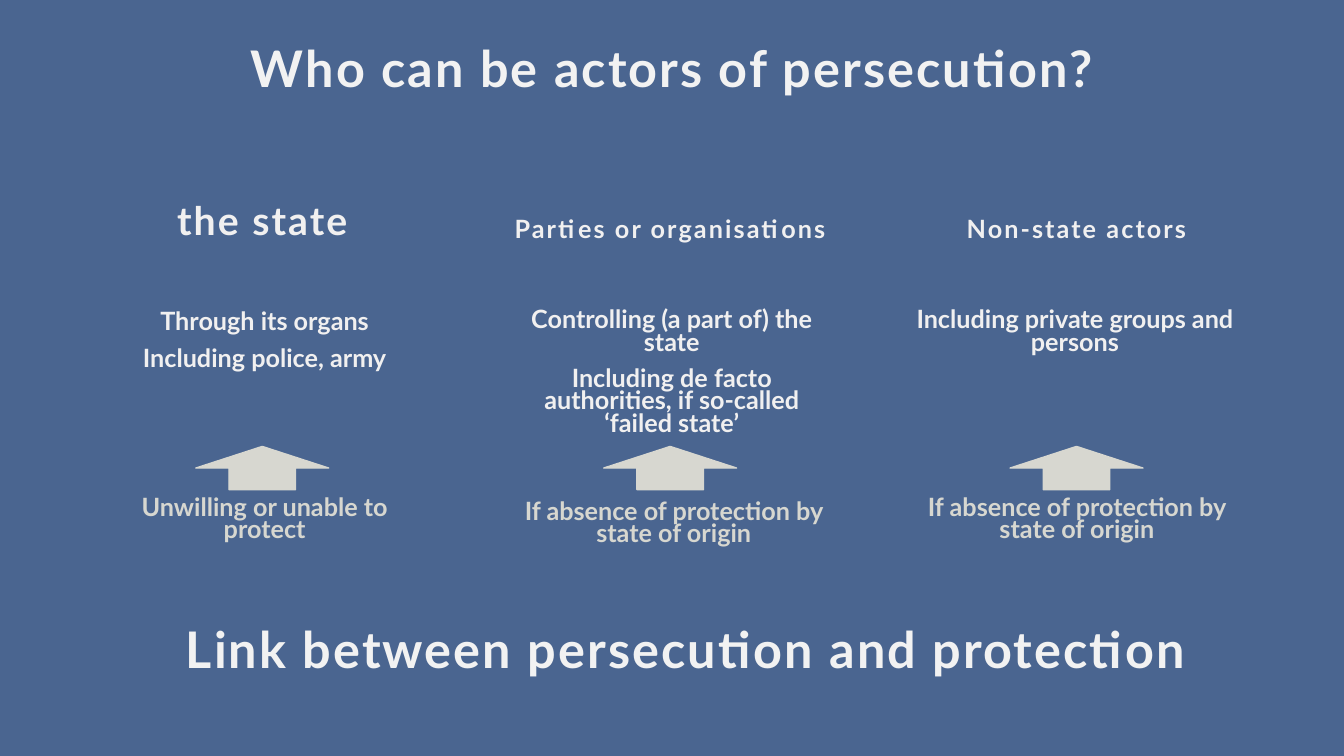
from dataclasses import dataclass

from pptx import Presentation
from pptx.dml.color import RGBColor
from pptx.enum.shapes import MSO_SHAPE
from pptx.enum.text import MSO_ANCHOR, PP_ALIGN
from pptx.util import Cm, Pt

UP_ARROW = MSO_SHAPE.UP_ARROW
TOP, MIDDLE, BOTTOM = MSO_ANCHOR.TOP, MSO_ANCHOR.MIDDLE, MSO_ANCHOR.BOTTOM
CENTER = PP_ALIGN.CENTER


@dataclass(frozen=True)
class Theme:
    font: str = "Lato"
    background: RGBColor = RGBColor(0x4A, 0x65, 0x90)
    banner: RGBColor = RGBColor(0xF2, 0xF2, 0xF2)
    body: RGBColor = RGBColor(0xF1, 0xF0, 0xF0)
    accent: RGBColor = RGBColor(0xD7, 0xD7, 0xD0)
    banner_size: int = 36
    lead_size: int = 28
    body_size: int = 18
    body_leading: Pt = Pt(16)
    heading_leading: float = 0.9
    tracking: float = 1.5


@dataclass(frozen=True)
class Actor:
    """One column; the offsets of its texts are in cm from the column's corner."""
    left: float
    heading: str
    heading_size: int
    details: tuple
    detail_offset: tuple
    condition: str
    condition_offset: tuple


THEME = Theme()
COLUMN_TOP, COLUMN_WIDTH = 4.39, 8.74
ABSENCE = "If absence of protection by state of origin"
ACTORS = (
    Actor(2.24, "the state", THEME.lead_size,
          ("Through its organs", "Including police, army"), (0.1, 3.38),
          "Unwilling or unable to protect", (0.1, 8.06)),
    Actor(12.52, "Parties or organisations", THEME.body_size,
          ("Controlling (a part of) the state",
           "Including de facto authorities, if so-called ‘failed state’"), (0.08, 3.33),
          ABSENCE, (0.13, 8.16)),
    Actor(22.76, "Non-state actors", THEME.body_size,
          ("Including private groups and persons",), (0, 3.33),
          ABSENCE, (0.05, 8.06)),
)


def add_text(slide, box, *paragraphs, size=THEME.body_size, color=THEME.body,
             anchor=TOP, leading=THEME.body_leading, before=10, tracking=0):
    frame = slide.shapes.add_textbox(*map(Cm, box)).text_frame
    frame.word_wrap = True
    frame.vertical_anchor = anchor
    for index, text in enumerate(paragraphs):
        paragraph = frame.paragraphs[0] if index == 0 else frame.add_paragraph()
        paragraph.alignment = CENTER
        paragraph.line_spacing = leading
        paragraph.space_before = Pt(before)
        run = paragraph.add_run()
        run.text = text
        run.font.name = THEME.font
        run.font.size = Pt(size)
        run.font.bold = True
        run.font.color.rgb = color
        if tracking:
            run._r.get_or_add_rPr().set("spc", str(int(tracking * 100)))


def add_banner(slide, box, text):
    add_text(slide, box, text, size=THEME.banner_size, color=THEME.banner, anchor=MIDDLE,
             leading=THEME.heading_leading, before=0, tracking=THEME.tracking)


def add_arrow(slide, box):
    arrow = slide.shapes.add_shape(UP_ARROW, *map(Cm, box))
    arrow.shadow.inherit = False
    arrow.fill.solid()
    arrow.fill.fore_color.rgb = THEME.accent
    arrow.line.color.rgb = THEME.accent
    arrow.line.width = Pt(1)


def add_actor_column(slide, left, top, width, actor):
    def place(offset, box_width, height):
        return left + offset[0], top + offset[1], box_width, height

    text_width = width - 0.08
    add_text(slide, place((0, 0), width, 1.88), actor.heading, size=actor.heading_size,
             anchor=BOTTOM, leading=THEME.heading_leading, tracking=THEME.tracking)
    add_text(slide, place(actor.detail_offset, text_width, 4.19), *actor.details)
    add_text(slide, place(actor.condition_offset, text_width, 2.29), actor.condition,
             color=THEME.accent)
    arrow_width = 3.35
    add_arrow(slide, place(((width - arrow_width) / 2, 6.86), arrow_width, 1.09))


def main():
    deck = Presentation()
    deck.slide_width, deck.slide_height = Cm(33.87), Cm(19.05)
    slide = deck.slides.add_slide(deck.slide_layouts[6])
    slide.background.fill.solid()
    slide.background.fill.fore_color.rgb = THEME.background

    add_banner(slide, (2.34, 0.66, 29.21, 2.29), "Who can be actors of persecution?")
    for actor in ACTORS:
        add_actor_column(slide, actor.left, COLUMN_TOP, COLUMN_WIDTH, actor)
    add_banner(slide, (2.69, 15.29, 29.21, 2.29), "Link between persecution and protection")
    deck.save("out.pptx")


if __name__ == "__main__":
    main()
